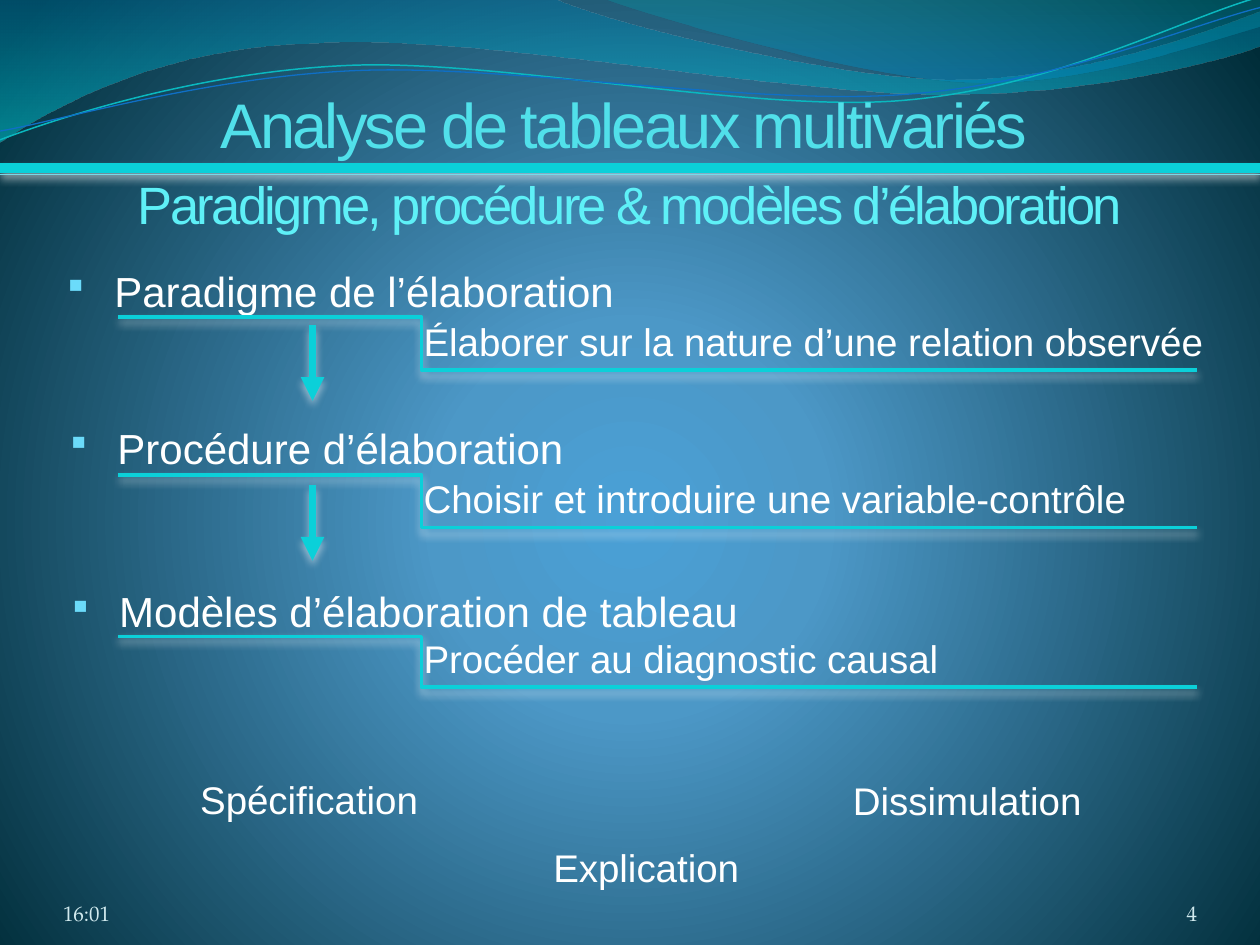
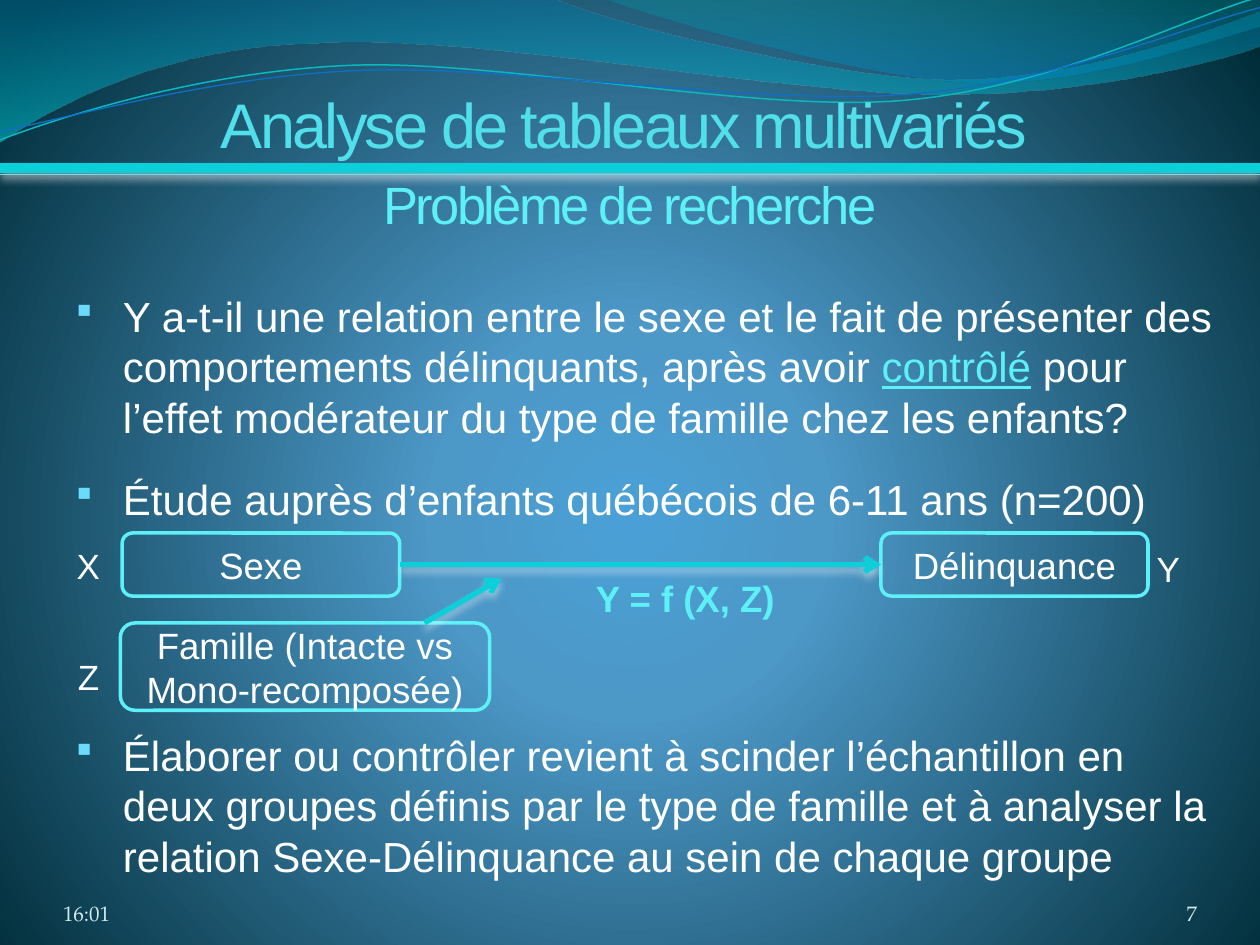
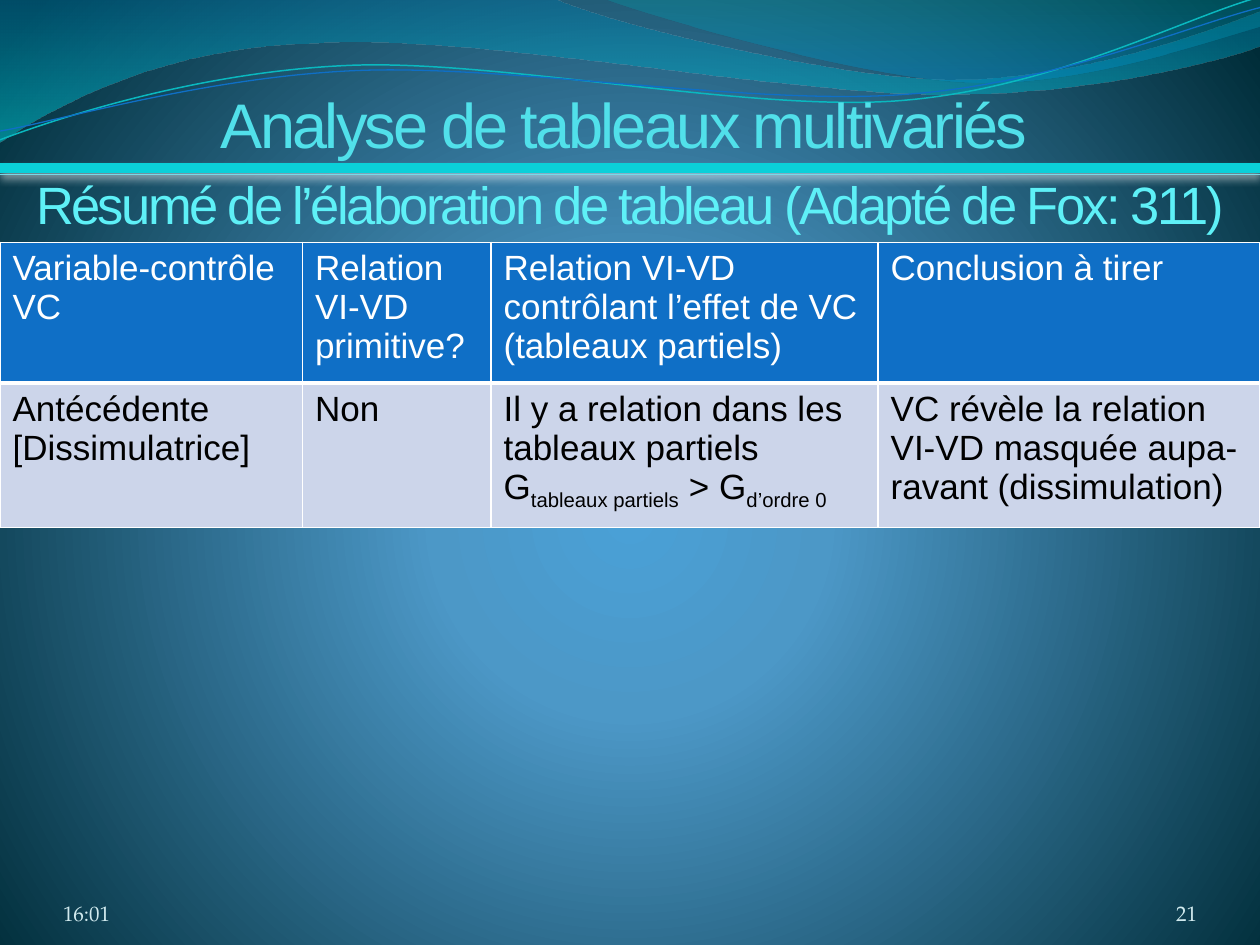
from pptx import Presentation
from pptx.dml.color import RGBColor
from pptx.enum.shapes import MSO_CONNECTOR, MSO_SHAPE
from pptx.enum.text import MSO_ANCHOR, MSO_AUTO_SIZE, PP_ALIGN
from pptx.oxml import parse_xml
from pptx.oxml.ns import nsdecls, qn
from pptx.util import Pt

STRAIGHT, ELBOW = MSO_CONNECTOR.STRAIGHT, MSO_CONNECTOR.ELBOW
ROUNDED = MSO_SHAPE.ROUNDED_RECTANGLE
CENTER, RIGHT = PP_ALIGN.CENTER, PP_ALIGN.RIGHT
MIDDLE, BOTTOM = MSO_ANCHOR.MIDDLE, MSO_ANCHOR.BOTTOM
NO_AUTOFIT = MSO_AUTO_SIZE.NONE

COLORS = {
    "center": "4AA0D6", "halo": "4C98C7", "edge": "002C38",
    "title": "51E0EA", "accent": "5EF0F7", "text": "FFFFFF", "footer": "D1EAEE",
    "bullet": "6BDBFA", "line": "0BD0D9", "thin line": "77D9E8", "shadow": "FFFFFF",
    "wave top": "0074A1", "wave bottom": "00C6CF",
    "crest top": "00A1A9", "crest bottom": "008BBF",
    "teal curve": "0AB8BF", "blue curve": "0F6FC6",
    "header": "0F6FC6", "row": "CCD5EA", "row text": "000000",
}
FONT, FOOTER_FONT = "Arial", "TeX Gyre Pagella"


def rgb(name):
    return RGBColor.from_string(COLORS[name])


def add_text(slide, text, left, top, width, height, size, color="text", bullet=False):
    """Add a text box; a newline starts a paragraph and "|" starts a run."""
    box = slide.shapes.add_textbox(Pt(left), Pt(top), Pt(width), Pt(height))
    frame = box.text_frame
    frame.word_wrap = True
    frame.text = text.replace("|", "")
    for paragraph, line in zip(frame.paragraphs, text.split("\n")):
        paragraph.text = ""
        for piece in line.split("|"):
            run = paragraph.add_run()
            run.text = piece
            run.font.name = FONT
            run.font.size = Pt(size)
            run.font.color.rgb = rgb(color)
        if bullet:
            properties = paragraph._p.get_or_add_pPr()
            properties.set("marL", str(Pt(27)))
            properties.set("indent", str(Pt(-27)))
            for xml in (f'<a:buClr {nsdecls("a")}><a:srgbClr val="{COLORS["bullet"]}"/></a:buClr>',
                        f'<a:buSzPct {nsdecls("a")} val="90000"/>',
                        f'<a:buFont {nsdecls("a")} typeface="Wingdings" charset="2"/>',
                        f'<a:buChar {nsdecls("a")} char="§"/>'):
                properties.append(parse_xml(xml))
    return frame


def add_line(slide, start, end, width, color="line", kind=STRAIGHT, arrow=None, shadow=True):
    connector = slide.shapes.add_connector(kind, *[Pt(value) for value in start + end])
    connector.line.width = Pt(width)
    connector.line.color.rgb = rgb(color)
    if arrow:
        connector.line._get_or_add_ln().append(
            parse_xml(f'<a:tailEnd {nsdecls("a")} type="{arrow}"/>'))
    effect = (f'<a:outerShdw blurRad="{Pt(4.5)}" dist="{Pt(3)}" dir="5400000" algn="ctr" '
              f'rotWithShape="0"><a:srgbClr val="{COLORS["shadow"]}"><a:alpha val="48000"/>'
              '</a:srgbClr></a:outerShdw>') if shadow else ""
    connector.element.spPr.append(
        parse_xml(f'<a:effectLst {nsdecls("a")}>{effect}</a:effectLst>'))
    return connector


presentation = Presentation()
presentation.slide_width, presentation.slide_height = Pt(720), Pt(540)
master = presentation.slide_master
title_only = presentation.slide_layouts[5]

# Background: a glow below the middle
master.background.fill.gradient()
gradient = master.element.find(".//" + qn("a:gradFill"))
stops = "".join(f'<a:gs pos="{position}000"><a:srgbClr val="{COLORS[name]}"/></a:gs>'
                for position, name in ((0, "center"), (25, "halo"), (100, "edge")))
gradient.getparent().replace(gradient, parse_xml(
    f'<a:gradFill {nsdecls("a")} rotWithShape="1"><a:gsLst>{stops}</a:gsLst><a:path path="circle">'
    '<a:fillToRect l="10000" t="110000" r="10000" b="100000"/></a:path></a:gradFill>'))

# Title, subtitle, rule and footer of every slide
slides = []
for number, subtitle in (
        (4, "Paradigme, procédure & modèles d’élaboration"),
        (7, "Problème de recherche"),
        (21, "Résumé de l’élaboration de tableau (Adapté de Fox: 311)")):
    slide = presentation.slides.add_slide(title_only)
    slides.append(slide)
    title = slide.shapes.title
    title.left, title.top, title.width, title.height = Pt(-2.6), Pt(40.3), Pt(720), Pt(51.8)
    title_frame = title.text_frame
    title_frame.text = "Analyse de tableaux multivariés"
    title_frame.auto_size = NO_AUTOFIT
    title_frame.vertical_anchor = BOTTOM
    title_frame.margin_left = title_frame.margin_top = title_frame.margin_bottom = 0
    title_frame.margin_right = Pt(1.4)
    title_font = title_frame.paragraphs[0].runs[0].font
    title_font.name, title_font.size = FONT, Pt(36)
    title_font.color.rgb = rgb("title")
    subtitle_frame = add_text(slide, subtitle, 0, 95, 720, 44, 30, "accent")
    for frame in (title_frame, subtitle_frame):
        paragraph = frame.paragraphs[0]
        paragraph.alignment = CENTER
        paragraph.runs[0]._r.get_or_add_rPr().set("spc", "-150")

    add_line(slide, (0, 96), (720, 96), 6)
    add_line(slide, (0, 99.8), (720, 99.8), 0.75, "thin line", shadow=False)

    time_frame = add_text(slide, "16:01", 36, 500.4, 168, 28.8, 12, "footer")
    number_frame = add_text(slide, str(number), 624, 500.4, 60, 28.8, 12, "footer")
    number_frame.paragraphs[0].alignment = RIGHT
    for frame in (time_frame, number_frame):
        frame.margin_left = frame.margin_top = frame.margin_right = frame.margin_bottom = 0
        frame.vertical_anchor = BOTTOM
        frame.paragraphs[0].runs[0].font.name = FOOTER_FONT

steps_slide, problem_slide, summary_slide = slides

# Waves on the master: single points end straight sides, triples are Bézier curves
WAVE = [[(0, 0)], [(316.8, -0.7)], [(342.7, 12.2), (478.1, 45.4), (545.8, 45.4)],
        [(614.2, 45.4), (689.8, 18.7), (720, 6.5)], [(720.7, 25.9)],
        [(707.8, 31.7), (626.4, 54.7), (537.1, 54)], [(447.8, 54), (275, 20.2), (185, 24.5)],
        [(92.9, 25.9), (33.1, 59.8), (-0.7, 81.4)], [(0, 0)]]
CREST = [[(344.9, -0.7)], [(366.5, 7.9), (491, 44.6), (553.7, 46.8)],
         [(616.3, 49.7), (691.9, 23), (720, 15.1)], [(720, 0)], [(344.9, -0.7)]]
TEAL_CURVE = [[(0, 79.9)], [(34.6, 67), (113.8, 41), (199.4, 37.4)],
              [(284.4, 33.8), (427, 64.1), (513.4, 57.6)],
              [(599.8, 51.1), (675.4, 10.8), (718.6, -1.4)]]
BLUE_CURVE = [[(0, 74.9)], [(33.8, 69.1), (118.1, 43.9), (203.8, 40.3)],
              [(290.2, 36.7), (429.8, 60.5), (516.2, 54)],
              [(601.9, 48.2), (677.5, 15.1), (720, 4.3)]]
for outline, fill_stops, line in (
        (WAVE, (("wave top", 45, 0), ("wave bottom", 55, 1)), None),
        (CREST, (("crest top", 30, 0), ("crest bottom", 45, 0.8)), None),
        (TEAL_CURVE, None, ("teal curve", 0.85)),
        (BLUE_CURVE, None, ("blue curve", 0.75))):
    points = [(Pt(x), Pt(y)) for segment in outline for x, y in segment]
    builder = steps_slide.shapes.build_freeform(*points[0])
    builder.add_line_segments(points[1:], close=fill_stops is not None)
    shape = builder.convert_to_shape()
    sides = iter(list(shape.element.iter(qn("a:lnTo"))))
    for segment in outline[1:]:
        segment_sides = [next(sides) for _ in segment]
        if len(segment) == 3:
            curve = parse_xml(f'<a:cubicBezTo {nsdecls("a")}/>')
            segment_sides[0].addprevious(curve)
            for side in segment_sides:
                curve.append(side[0])
                side.getparent().remove(side)
    shape.shadow.inherit = False
    if fill_stops:
        shape.line.fill.background()
        shape.fill.gradient()
        shape.fill.gradient_angle = 270
        for stop, (name, _, position) in zip(shape.fill.gradient_stops, fill_stops):
            stop.color.rgb = rgb(name)
            stop.position = position
        for color, (_, opacity, _) in zip(shape.element.spPr.iter(qn("a:srgbClr")), fill_stops):
            color.append(parse_xml(f'<a:alpha {nsdecls("a")} val="{opacity}000"/>'))
    else:
        shape.fill.background()
        shape.line.color.rgb = rgb(line[0])
        shape.line.width = Pt(line[1])
    master.shapes.element.append(shape.element)

# Slide 1: three steps of elaboration
for heading, left, top, width, detail, detail_top, rule_top, rule_drop in (
        ("Paradigme de l’élaboration", 31.2, 148, 336,
         "Élaborer sur la nature d’une relation observée", 178.2, 181.2, 30.2),
        ("Procédure d’élaboration", 33, 237.6, 334,
         "Choisir et introduire une variable-contrôle", 267.8, 271.3, 30.2),
        ("Modèles d’élaboration de tableau", 34, 331.2, 550,
         "Procéder au diagnostic causal", 359.3, 363.6, 29)):
    add_text(steps_slide, heading, left, top, width, 38, 24, bullet=True)
    add_text(steps_slide, detail, 235, detail_top, 468, 42, 22)
    rule = add_line(steps_slide, (67.7, rule_top), (684, rule_top + rule_drop), 2, kind=ELBOW)
    rule.element.spPr.find(".//" + qn("a:avLst")).append(
        parse_xml(f'<a:gd {nsdecls("a")} name="adj1" fmla="val 28100"/>'))
for top in (185.8, 277.2):
    add_line(steps_slide, (178.6, top), (178.6, top + 43.2), 4.5, arrow="triangle")
for model, left, top, width in (("Spécification", 107.3, 440, 143),
                                ("Explication", 309.1, 478.8, 132.5),
                                ("Dissimulation", 480.3, 440.6, 146)):
    add_text(steps_slide, model, left, top, width, 42, 22)

# Slide 2: research problem and its causal diagram
body_frame = add_text(
    problem_slide,
    "Y a-t-il une relation entre le sexe et le fait de présenter des comportements délinquants, "
    "après avoir |contrôlé| pour l’effet modérateur du type de famille chez les enfants?\n"
    "Étude auprès d’enfants québécois de 6-11 ans (n=200)\n"
    "Élaborer ou contrôler revient à scinder l’échantillon en deux groupes définis par le type "
    "de famille et à analyser la relation Sexe-Délinquance au sein de chaque groupe",
    36.2, 162.4, 667.4, 360.7, 24, bullet=True)
for paragraph, space_before in zip(body_frame.paragraphs, (0, 18, 117.6)):
    paragraph.line_spacing = Pt(28.8)
    paragraph.space_before = Pt(space_before)
controlled = body_frame.paragraphs[0].runs[1].font
controlled.underline = True
controlled.color.rgb = rgb("accent")

for variable, left, top, width, height in (
        ("Sexe", 69.8, 304.6, 158.6, 36), ("Délinquance", 503.4, 304.6, 152.6, 36),
        ("Famille (Intacte vs Mono-recomposée)", 68.8, 356, 211, 49.9)):
    shape = problem_slide.shapes.add_shape(ROUNDED, Pt(left), Pt(top), Pt(width), Pt(height))
    shape.shadow.inherit = False
    shape.fill.background()
    shape.line.color.rgb = rgb("accent")
    shape.line.width = Pt(2)
    shape.text_frame.text = variable
    shape.text_frame.vertical_anchor = MIDDLE
    paragraph = shape.text_frame.paragraphs[0]
    paragraph.alignment = CENTER
    paragraph.line_spacing = Pt(25.1)
    font = paragraph.runs[0].font
    font.name, font.size = FONT, Pt(20.9)
    font.color.rgb = rgb("text")
for start, end in (((228.4, 322.6), (503.4, 322.6)), ((242.6, 356), (286.6, 330.5))):
    add_line(problem_slide, start, end, 3, arrow="arrow")
for letter, left, top in (("X", 36.7, 307.4), ("Y", 653.8, 309.6), ("Z", 37.4, 370.8)):
    add_text(problem_slide, letter, left, top, 35.3, 31.7, 20)
formula_frame = add_text(problem_slide, "Y = f (X, Z)", 333.4, 325.4, 122.4, 32.4, 20.9, "accent")
formula_frame.paragraphs[0].runs[0].font.bold = True

# Slide 3: summary table, where every second run of a cell is a subscript
ROWS = [
    ["Variable-contrôle VC", "Relation VI-VD primitive?",
     "Relation VI-VD contrôlant l’effet de VC (tableaux partiels)", "Conclusion à tirer"],
    ["Antécédente\n[Dissimulatrice]", "Non",
     "Il y a relation dans les tableaux partiels\nG|tableaux partiels| > G|d’ordre 0",
     "VC révèle la relation VI-VD masquée aupa-ravant (dissimulation)"],
]
STYLES = [("header", "text", {"L": 1, "R": 1, "T": 1, "B": 3}),
          ("row", "row text", {"L": 1, "R": 1, "T": 3, "B": 1})]
table = summary_slide.shapes.add_table(2, 4, 0, Pt(138.5), Pt(720), Pt(160.8)).table
for column, width in zip(table.columns, (172.8, 107.8, 221.2, 218.2)):
    column.width = Pt(width)
for row, texts, (fill, color, borders) in zip(table.rows, ROWS, STYLES):
    row.height = Pt(80.4)
    for cell, text in zip(row.cells, texts):
        cell.text = text.replace("|", "")
        for paragraph, line in zip(cell.text_frame.paragraphs, text.split("\n")):
            paragraph.text = ""
            for index, piece in enumerate(line.split("|")):
                run = paragraph.add_run()
                run.text = piece
                run.font.name, run.font.size = FONT, Pt(20)
                run.font.bold = False
                run.font.color.rgb = rgb(color)
                if index % 2:
                    run._r.get_or_add_rPr().set("baseline", "-25000")
        properties = cell._tc.get_or_add_tcPr()
        for side, width in borders.items():
            properties.append(parse_xml(
                f'<a:ln{side} {nsdecls("a")} w="{Pt(width)}"><a:solidFill>'
                f'<a:srgbClr val="{COLORS["text"]}"/></a:solidFill></a:ln{side}>'))
        cell.fill.solid()
        cell.fill.fore_color.rgb = rgb(fill)

presentation.save("out.pptx")
